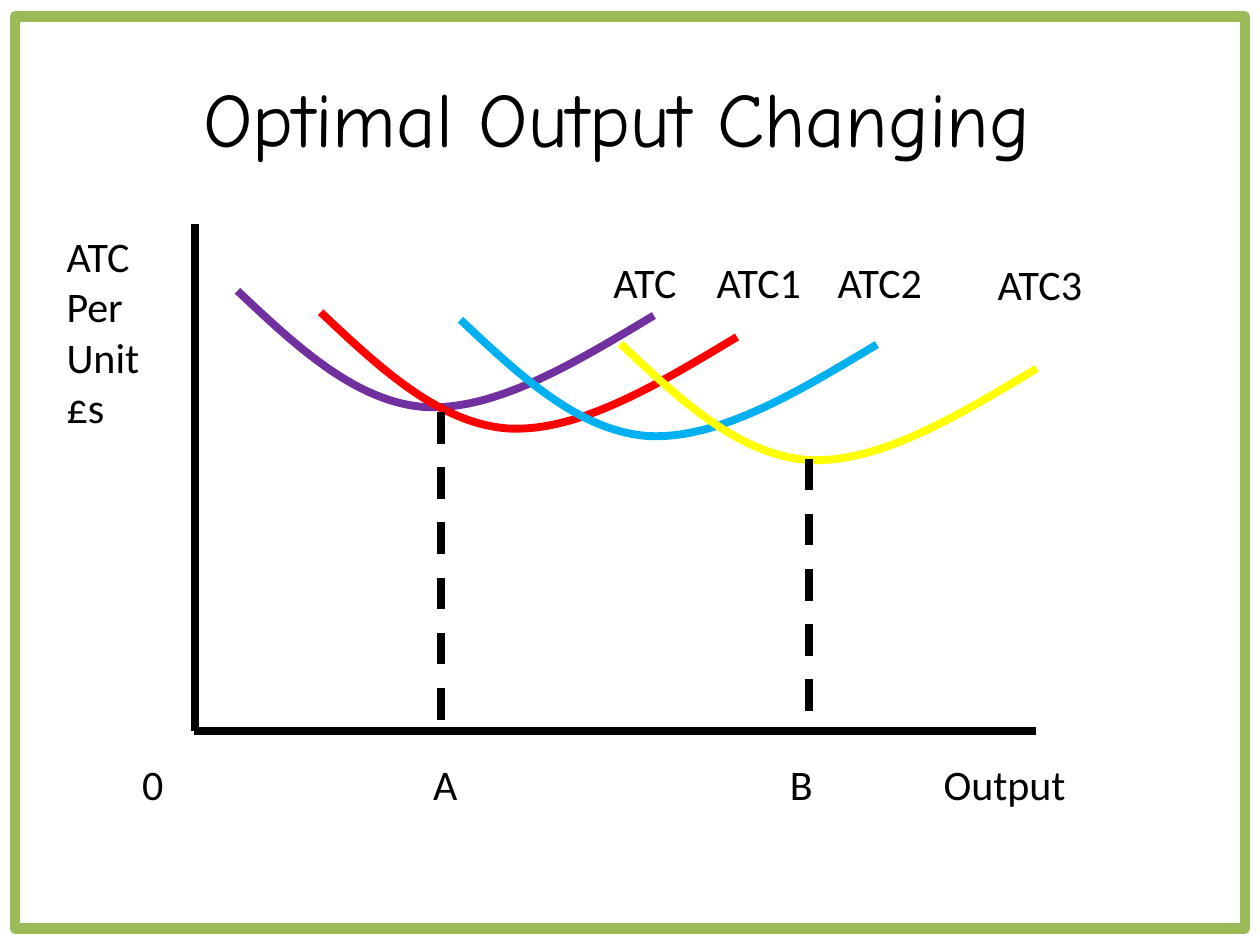
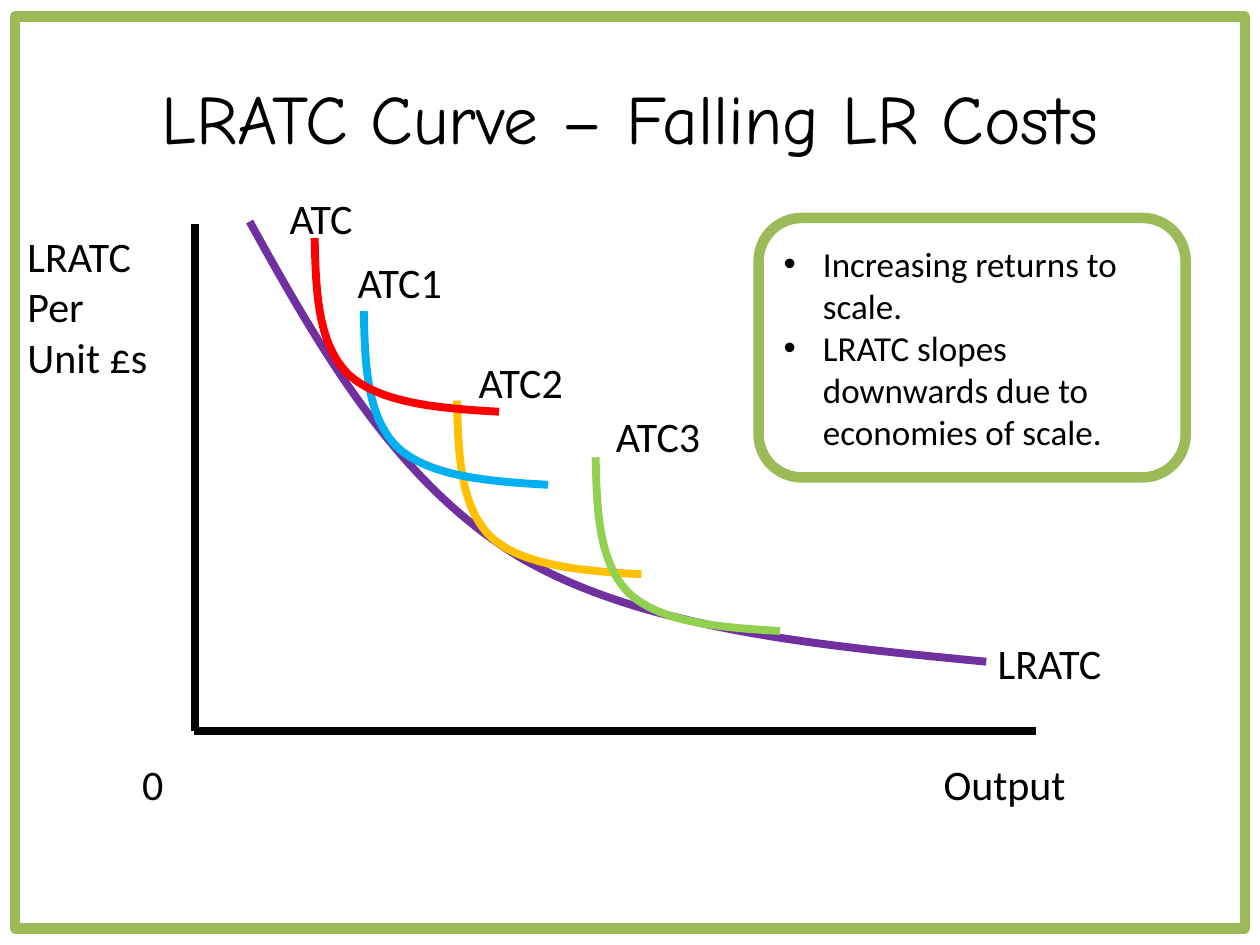
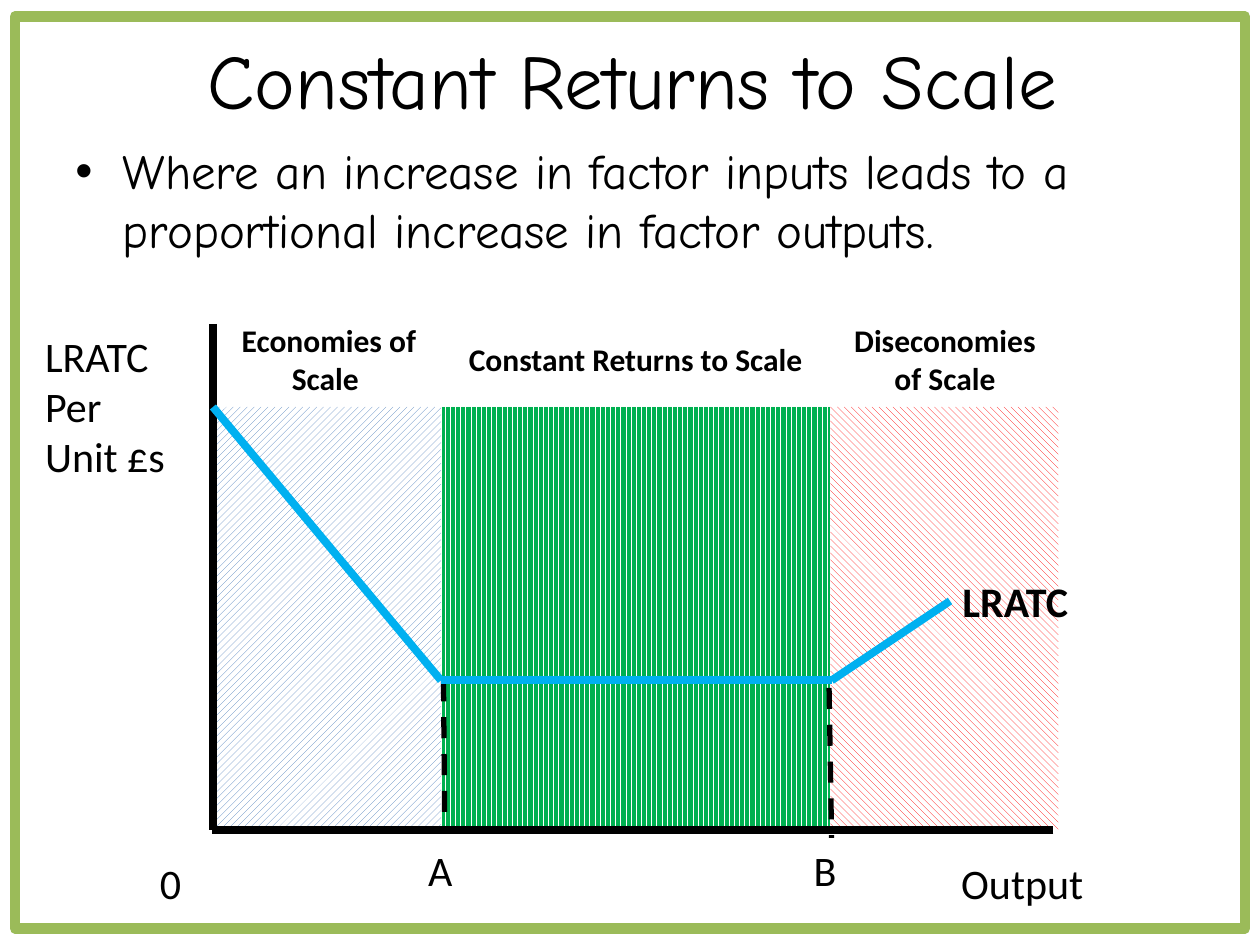
"""Three slides of cost curve diagrams on a shared frame, title and pair of axes."""
from lxml import etree
from pptx import Presentation
from pptx import util as u
from pptx.dml.color import RGBColor
from pptx.enum import dml, shapes, text
from pptx.oxml.ns import qn

BLACK = RGBColor(0x00, 0x00, 0x00)
WHITE = RGBColor(0xFF, 0xFF, 0xFF)
OLIVE = RGBColor(0x9B, 0xBB, 0x59)
PURPLE = RGBColor(0x70, 0x30, 0xA0)
RED = RGBColor(0xFF, 0x00, 0x00)
SKY = RGBColor(0x00, 0xB0, 0xF0)
YELLOW = RGBColor(0xFF, 0xFF, 0x00)
AMBER = RGBColor(0xFF, 0xC0, 0x00)
LIME = RGBColor(0x92, 0xD0, 0x50)
GREEN = RGBColor(0x00, 0xB0, 0x50)
BLUE = RGBColor(0x4F, 0x81, 0xBD)

HEAD, BODY = "Comic Neue", "Calibri"
MID = text.PP_ALIGN.CENTER
BOLD = {"size": 18, "bold": True, "align": MID}
AXIS = (1.55, 1.78)
LOW = (1.69, 2.57)

DIP = (4.6, [(0, 0.07), (0.5, 0.47), (1, 0.87), (1.55, 0.87),
             (2.11, 0.86), (2.71, 0.43), (3.31, 0)])
FALL = (44.7, [(0, 0.05), (0.31, 0.35), (0.61, 0.63), (0.95, 0.63),
               (1.29, 0.62), (1.66, 0.31), (2.01, 0)])
LONG = (31.7, [(0, 0.1), (1.03, 0.68), (2.07, 1.24), (3.2, 1.24),
               (4.33, 1.22), (5.57, 0.61), (6.81, 0)])

SLIDES = [
    {"title": ("Optimal Output Changing ", 44, (0.5, 0.3)),
     "axes": (AXIS, "ATC Per Unit £s", (0.43, 0.94, 1.72)),
     "curves": [(DIP, 1.85, 2.37, PURPLE), (DIP, 2.51, 2.54, RED),
                (DIP, 3.62, 2.6, SKY), (DIP, 4.89, 2.79, YELLOW)],
     "lines": [((6.42, 3.64), (6.42, 5.8), BLACK, 4.5, True),
               ((3.5, 3.27), (3.5, 5.8), BLACK, 4.5, True)],
     "labels": [("ATC", (4.77, 1.99, 0.83, 0.5), {}),
                ("ATC1", (5.59, 1.99, 0.96, 0.5), {}),
                ("ATC2", (6.55, 1.99, 0.94, 0.5), {}),
                ("ATC3", (7.82, 2, 1.12, 0.5), {}),
                ("A", (3.34, 5.97, 0.5, 0.5), {}),
                ("B", (6.17, 5.97, 0.5, 0.5), {})]},
    {"title": ("LRATC Curve – Falling LR Costs", 39.6, (0.5, 0.3)),
     "axes": (AXIS, "LRATC Per Unit £s", (0.12, 1.26, 1.31)),
     "curves": [(LONG, 1.2, 3.37, PURPLE), (FALL, 3.15, 3.76, AMBER),
                (FALL, 2.41, 3.05, SKY), (FALL, 2.02, 2.47, RED),
                (FALL, 4.25, 4.21, LIME)],
     "labels": [("ATC", (2.2, 1.48, 0.83, 0.5), {}),
                ("ATC1", (2.74, 1.99, 0.96, 0.5), {}),
                ("ATC2", (3.7, 2.78, 0.94, 0.5), {}),
                ("ATC3", (4.79, 3.21, 0.94, 0.5), {}),
                ("LRATC", (7.82, 5.01, 1.12, 0.5), {})],
     "note": (["Increasing returns to scale.",
               "LRATC slopes downwards due to economies of scale."],
              (6.02, 1.73, 3.39, 2.06))},
    {"title": ("Constant Returns to Scale", 44, (0.52, 0)),
     "axes": (LOW, "LRATC Per Unit £s", (0.26, 1.26, 1.31)),
     "zones": [(6.59, 1.81, "WIDE_DOWNWARD_DIAGONAL", RED),
               (3.5, 3.08, "DARK_VERTICAL", GREEN),
               (1.69, 1.81, "WIDE_UPWARD_DIAGONAL", BLUE)],
     "lines": [((3.52, 5.4), (3.53, 6.59), BLACK, 3, True),
               ((1.69, 3.23), (3.5, 5.4), SKY, 4.5, False),
               ((3.5, 5.4), (6.6, 5.4), SKY, 4.5, False),
               ((6.6, 5.4), (7.54, 4.77), SKY, 4.5, False),
               ((6.58, 5.46), (6.6, 6.65), BLACK, 3, True)],
     "labels": [("Where an increase in factor inputs leads to a proportional "
                 "increase in factor outputs.", (0.5, 1.07, 9, 5.63),
                 {"size": 28, "name": HEAD, "indent": 27, "before": 5.6,
                  "grow": False}),
                ("LRATC", (7.54, 4.52, 1.33, 0.5), {"bold": True}),
                ("A", (3.3, 6.65, 0.47, 0.5), {}),
                ("B", (6.36, 6.65, 0.47, 0.5), {}),
                ("Economies of Scale ", (1.69, 2.5, 1.84, 0.71), BOLD),
                ("Constant Returns to Scale", (3.59, 2.65, 2.91, 0.4), BOLD),
                ("Diseconomies of Scale", (6.6, 2.5, 1.8, 0.71), BOLD)]},
]


def inches(vals):
    return [u.Inches(v) for v in vals]


def write(frame, lines, size=24, name=BODY, bold=False, align=None, indent=0,
          before=0, anchor=text.MSO_ANCHOR.TOP, grow=True):
    fit = text.MSO_AUTO_SIZE
    form = {"word_wrap": True, "vertical_anchor": anchor,
            "auto_size": fit.SHAPE_TO_FIT_TEXT if grow else fit.NONE}
    for key, val in form.items():
        setattr(frame, key, val)
    for i, line in enumerate(lines):
        para = frame.add_paragraph() if i else frame.paragraphs[0]
        para.alignment = align
        para.space_before = u.Pt(before)
        run = para.add_run()
        run.text = line
        run.font.color.rgb = BLACK
        for key, val in {"size": u.Pt(size), "name": name, "bold": bold}.items():
            setattr(run.font, key, val)
        if indent:
            prop = para._p.get_or_add_pPr()
            prop.set("marL", str(u.Pt(indent)))
            prop.set("indent", str(-u.Pt(indent)))
            etree.SubElement(prop, qn("a:buFont")).set("typeface", "Arial")
            etree.SubElement(prop, qn("a:buChar")).set("char", "•")


def label(slide, words, box, form):
    write(slide.shapes.add_textbox(*inches(box)).text_frame, [words], **form)


def stroke(line, color, width):
    line.color.rgb = color
    line.width = u.Pt(width)


def outline(slide, kind, box):
    shape = slide.shapes.add_shape(kind, *inches(box))
    shape.shadow.inherit = False
    shape.fill.background()
    stroke(shape.line, OLIVE, 6)
    return shape


def zone(slide, left, width, hatch, color):
    shape = slide.shapes.add_shape(shapes.MSO_SHAPE.RECTANGLE,
                                   *inches((left, 3.23, width, 3.36)))
    shape.shadow.inherit = False
    shape.line.fill.background()
    shape.fill.patterned()
    shape.fill.pattern = getattr(dml.MSO_PATTERN, hatch)
    shape.fill.fore_color.rgb = color
    shape.fill.back_color.rgb = WHITE


def rule(slide, start, end, color=BLACK, width=4.5, dash=False):
    line = slide.shapes.add_connector(shapes.MSO_CONNECTOR.STRAIGHT,
                                      *inches(start + end))
    stroke(line.line, color, width)
    if dash:
        line.line.dash_style = dml.MSO_LINE.DASH
    etree.SubElement(line._element.spPr, qn("a:effectLst"))


def bend(shape):
    track = next(shape._element.iter(qn("a:path")))
    legs = track.findall(qn("a:lnTo"))
    for i in range(0, len(legs), 3):
        arc = etree.SubElement(track, qn("a:cubicBezTo"))
        for leg in legs[i:i + 3]:
            arc.append(leg[0])
            track.remove(leg)


def curve(slide, form, left, top, color):
    turn, knots = form
    first, *rest = [inches((left + x, top + y)) for x, y in knots]
    pen = slide.shapes.build_freeform(*first)
    pen.add_line_segments(rest, close=False)
    shape = pen.convert_to_shape()
    bend(shape)
    shape.rotation = turn
    shape.shadow.inherit = False
    shape.fill.background()
    stroke(shape.line, color, 4.5)


def axes(slide, origin, words, side):
    x, y = origin
    base = y + 4.02
    left, width, height = side
    rule(slide, (x, y), (x, base))
    rule(slide, (x + 6.67, base), (x - 0.01, base))
    label(slide, words, (left, y, width, height), {})
    label(slide, "Output", (x + 5.84, base + 0.17, 1.65, 0.5), {})
    label(slide, "0", (x - 0.52, base + 0.17, 0.5, 0.5), {})


def build(slide, data):
    for item in data.get("zones", []):
        zone(slide, *item)
    words, size, spot = data["title"]
    label(slide, words, spot + (9, 1.25),
          {"size": size, "name": HEAD, "align": MID, "grow": False,
           "anchor": text.MSO_ANCHOR.MIDDLE})
    outline(slide, shapes.MSO_SHAPE.RECTANGLE, (0.12, 0.13, 9.76, 7.24))
    axes(slide, *data["axes"])
    for item in data.get("curves", []):
        curve(slide, *item)
    for item in data.get("lines", []):
        rule(slide, *item)
    for item in data["labels"]:
        label(slide, *item)
    if "note" in data:
        lines, box = data["note"]
        card = outline(slide, shapes.MSO_SHAPE.ROUNDED_RECTANGLE, box)
        write(card.text_frame, lines, size=20, indent=22.5, grow=False,
              align=text.PP_ALIGN.LEFT, anchor=text.MSO_ANCHOR.MIDDLE)


def main():
    deck = Presentation()
    deck.slide_width, deck.slide_height = inches((10, 7.5))
    for data in SLIDES:
        build(deck.slides.add_slide(deck.slide_layouts[6]), data)
    deck.save("out.pptx")


if __name__ == "__main__":
    main()
